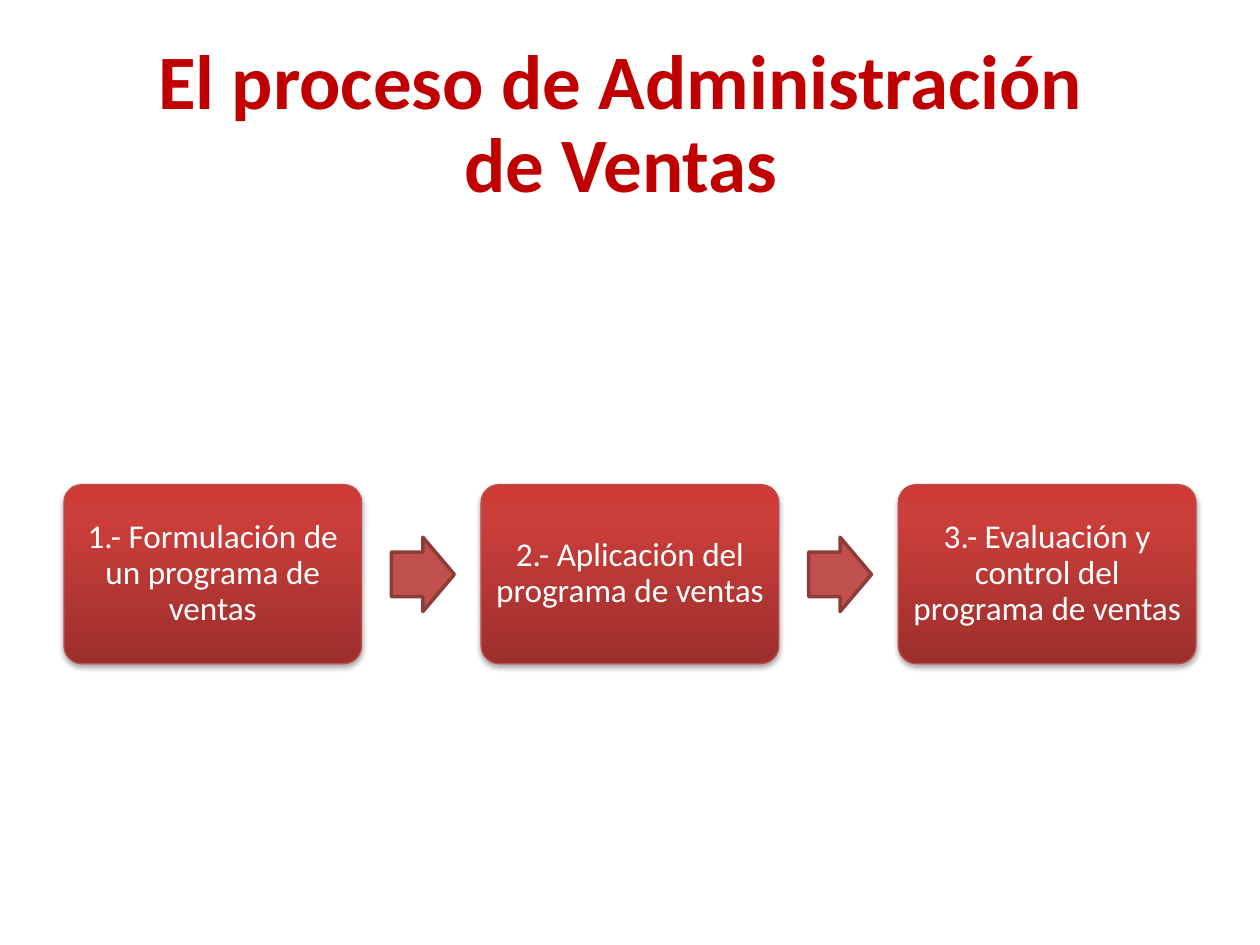
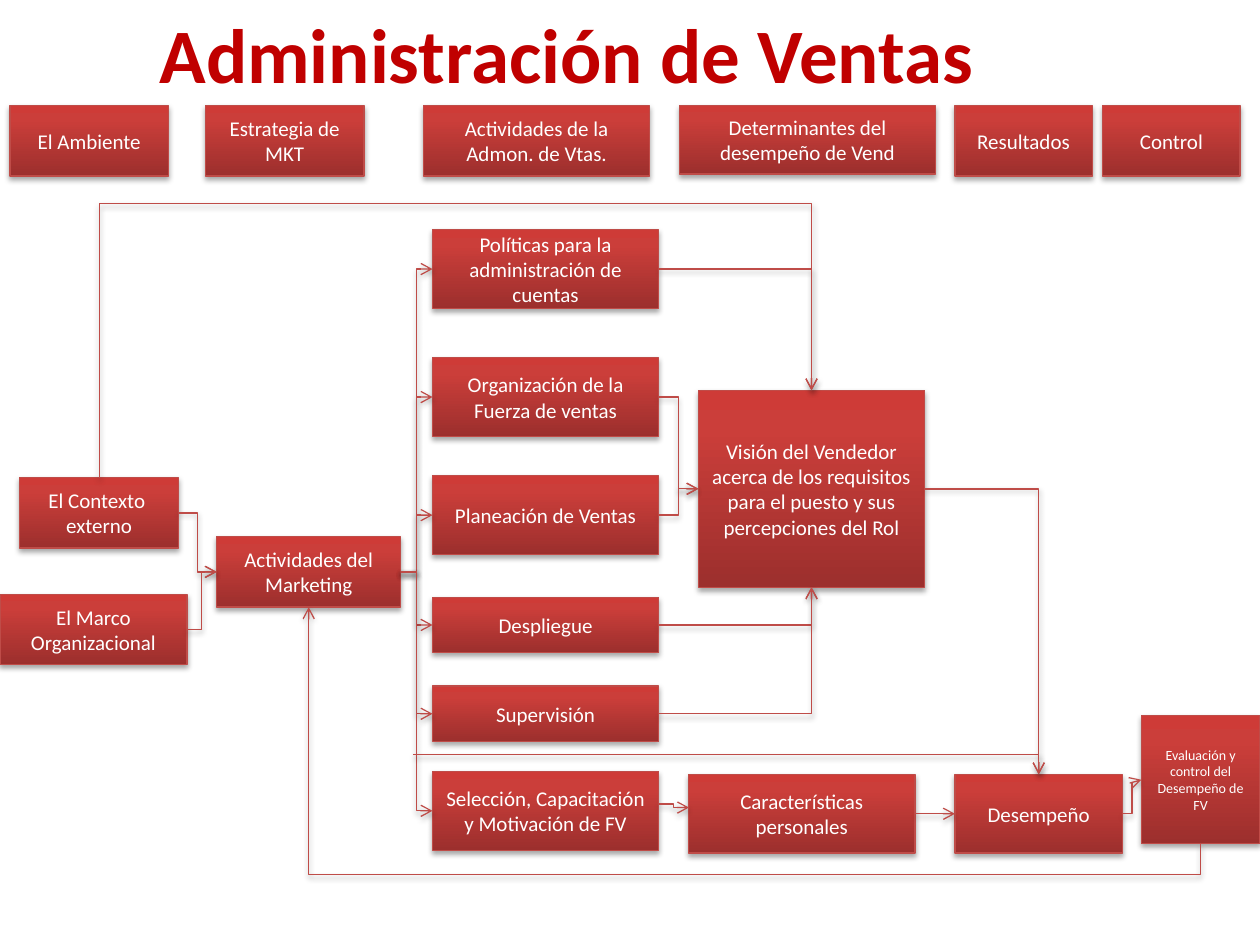
import copy

import lxml.etree
import pptx
import pptx.dml.color
import pptx.enum.shapes
import pptx.enum.text
import pptx.oxml
import pptx.oxml.ns
import pptx.util

Cm, Pt = pptx.util.Cm, pptx.util.Pt
RGBColor = pptx.dml.color.RGBColor
MSO_SHAPE = pptx.enum.shapes.MSO_SHAPE
MSO_CONNECTOR = pptx.enum.shapes.MSO_CONNECTOR
MSO_ANCHOR = pptx.enum.text.MSO_ANCHOR
qn = pptx.oxml.ns.qn

FONT = "Calibri"
WHITE = RGBColor(0xFF, 0xFF, 0xFF)
TITLE_RED = RGBColor(0xC0, 0x00, 0x00)
LINE_RED = RGBColor(0xBF, 0x4C, 0x48)
ARROW_FILL = RGBColor(0xC0, 0x50, 0x4D)
ARROW_LINE = RGBColor(0x8E, 0x3B, 0x39)
GRADIENT = [
    (0, RGBColor(0x9C, 0x2F, 0x2D)),
    (0.8, RGBColor(0xCB, 0x3E, 0x3A)),
    (1, RGBColor(0xCE, 0x3B, 0x37)),
]
SHADOW = pptx.oxml.parse_xml(
    '<a:outerShdw xmlns:a="http://schemas.openxmlformats.org/drawingml/2006/main"'
    ' blurRad="40000" dist="23000" dir="5400000" rotWithShape="0">'
    '<a:srgbClr val="000000"><a:alpha val="35000"/></a:srgbClr></a:outerShdw>'
)
TOP, LEFT, BOTTOM, RIGHT = range(4)


def put_text(sp, text, size=12, color=WHITE, bold=False, anchor=MSO_ANCHOR.MIDDLE,
             spacing=1.0, inset=None):
    """Fill a shape with centred text, one paragraph per line of text."""
    tf = sp.text_frame
    tf.word_wrap = True
    tf.auto_size = pptx.enum.text.MSO_AUTO_SIZE.NONE
    tf.vertical_anchor = anchor
    if inset is not None:
        tf.margin_left = tf.margin_right = tf.margin_top = tf.margin_bottom = inset
    for i, line in enumerate(text.split("\n")):
        p = tf.add_paragraph() if i else tf.paragraphs[0]
        p.alignment = pptx.enum.text.PP_ALIGN.CENTER
        p.line_spacing = spacing
        r = p.add_run()
        r.text = line
        r.font.name, r.font.size, r.font.bold = FONT, Pt(size), bold
        r.font.color.rgb = color


def add_box(s, text, x, y, w, h, shape=MSO_SHAPE.RECTANGLE, **fmt):
    """Add a red gradient box with a soft shadow; lengths in centimetres."""
    sp = s.shapes.add_shape(shape, Cm(x), Cm(y), Cm(w), Cm(h))
    sp.fill.gradient()
    sp.fill.gradient_angle = 90
    gs_list = sp._element.spPr.find(qn("a:gradFill")).find(qn("a:gsLst"))
    gs_list.append(copy.deepcopy(gs_list[0]))
    for stop, (position, color) in zip(sp.fill.gradient_stops, GRADIENT):
        stop.position = position
        stop.color.rgb = color
    sp.line.color.rgb = LINE_RED
    sp.line.width = Pt(0.75)
    sp.shadow.inherit = False
    sp._element.spPr.find(qn("a:effectLst")).append(copy.deepcopy(SHADOW))
    put_text(sp, text, **fmt)
    return sp


prs = pptx.Presentation()
prs.slide_width, prs.slide_height = Cm(25.4), Cm(19.05)

# Titles of both slides
slides = []
for text, x, y, spacing in [
    ("El proceso de Administración\nde Ventas", 1.09, 0.74, 0.9),
    ("Administración de Ventas", 0, 0, 1.0),
]:
    s = prs.slides.add_slide(prs.slide_layouts[5])
    title = s.shapes.title
    title.left, title.top, title.width, title.height = Cm(x), Cm(y), Cm(22.86), Cm(3.89)
    put_text(title, text, size=44, color=TITLE_RED, bold=True,
             anchor=MSO_ANCHOR.TOP, spacing=spacing)
    slides.append(s)
process, model = slides

# Slide 1: three steps joined by block arrows
STEP = 8.41
steps = [
    "1.- Formulación de un programa de ventas",
    "2.- Aplicación del programa de ventas",
    "3.- Evaluación y control del programa de ventas",
]
for i, text in enumerate(steps):
    sp = add_box(process, text, 1.29 + i * STEP, 9.77, 6, 3.61,
                 shape=MSO_SHAPE.ROUNDED_RECTANGLE, size=19, spacing=0.9, inset=Cm(0.1))
    sp.adjustments[0] = 0.1
    if i < len(steps) - 1:
        arrow = process.shapes.add_shape(
            MSO_SHAPE.RIGHT_ARROW, Cm(7.89 + i * STEP), Cm(10.83), Cm(1.27), Cm(1.5))
        arrow.adjustments[0], arrow.adjustments[1] = 0.6, 0.5
        arrow.fill.solid()
        arrow.fill.fore_color.rgb = ARROW_FILL
        arrow.line.color.rgb = ARROW_LINE
        arrow.line.width = Pt(2)
        arrow.shadow.inherit = False

# Slide 2: column headings
model.shapes.title.fill.solid()
model.shapes.title.fill.fore_color.rgb = WHITE
for text, x, w, h in [
    ("El Ambiente", 0.2, 3.2, 1.42),
    ("Estrategia de MKT", 4.14, 3.2, 1.42),
    ("Actividades de la Admon. de Vtas.", 8.54, 4.56, 1.42),
    ("Determinantes del desempeño de Vend", 13.7, 5.16, 1.38),
    ("Resultados", 19.25, 2.77, 1.42),
    ("Control", 22.23, 2.77, 1.42),
]:
    add_box(model, text, x, 2.13, w, h)

# Slide 2: boxes of the model
context = add_box(model, "El Contexto \nexterno", 0.4, 9.63, 3.2, 1.42)
framework = add_box(model, "El Marco Organizacional", 0, 11.98, 3.77, 1.42)
marketing = add_box(model, "Actividades del Marketing", 4.37, 10.82, 3.71, 1.42)
activities = [
    add_box(model, text, 8.72, y, 4.56, h)
    for text, y, h in [
        ("Políticas para la administración de cuentas", 4.63, 1.59),
        ("Organización de la Fuerza de ventas", 7.21, 1.59),
        ("Planeación de Ventas", 9.59, 1.59),
        ("Despliegue", 12.04, 1.12),
        ("Supervisión", 13.83, 1.12),
        ("Selección, Capacitación y Motivación de FV", 15.55, 1.59),
    ]
]
policies, organization, planning, deployment, supervision, selection = activities
vision = add_box(
    model,
    "Visión del Vendedor acerca de los requisitos para el puesto y sus percepciones del Rol",
    14.08, 7.87, 4.56, 3.97)
traits = add_box(model, "Características personales", 13.88, 15.61, 4.57, 1.59)
performance = add_box(model, "Desempeño", 19.25, 15.61, 3.38, 1.59)
evaluation = add_box(model, "Evaluación y control del Desempeño de FV",
                     23.01, 14.43, 2.39, 2.58, size=8)

# Slide 2: arrows as (start, end, preset, bend); an end is (box, side) or a point in cm
Z_BEND, CORNER, STRAIGHT = "bentConnector3", "bentConnector2", "line"
links = [
    ((context, TOP), (vision, TOP), Z_BEND, 3.14),
    ((context, RIGHT), (marketing, LEFT), Z_BEND, None),
    ((framework, RIGHT), (marketing, LEFT), Z_BEND, None),
    *[((marketing, RIGHT), (sp, LEFT), Z_BEND, None) for sp in activities],
    ((13.28, 16.21), (13.89, 16.28), Z_BEND, None),
    ((traits, RIGHT), (performance, LEFT), STRAIGHT, None),
    ((performance, RIGHT), (evaluation, LEFT), Z_BEND, None),
    ((8.33, 15.21), (performance, TOP), CORNER, None),
    *[((sp, RIGHT), (vision, LEFT), Z_BEND, None) for sp in (organization, planning)],
    *[((sp, RIGHT), (vision, BOTTOM), CORNER, None) for sp in (deployment, supervision)],
    ((policies, RIGHT), (vision, TOP), CORNER, None),
    ((evaluation, BOTTOM), (marketing, BOTTOM), Z_BEND, -0.13),
    ((vision, RIGHT), (performance, TOP), CORNER, None),
]
for start, end, preset, bend in links:
    kind = MSO_CONNECTOR.STRAIGHT if preset == STRAIGHT else MSO_CONNECTOR.ELBOW
    c = model.shapes.add_connector(kind, 0, 0, 0, 0)
    if isinstance(start[0], float):
        c.begin_x, c.begin_y = Cm(start[0]), Cm(start[1])
    else:
        c.begin_connect(*start)
    if isinstance(end[0], float):
        c.end_x, c.end_y = Cm(end[0]), Cm(end[1])
    else:
        c.end_connect(*end)
    c.line.color.rgb = LINE_RED
    c.line.width = Pt(0.75)
    spPr = c._element.spPr
    lxml.etree.SubElement(spPr.find(qn("a:ln")), qn("a:tailEnd"), type="arrow")
    lxml.etree.SubElement(spPr, qn("a:effectLst")).append(copy.deepcopy(SHADOW))
    geometry = spPr.find(qn("a:prstGeom"))
    geometry.set("prst", preset)
    if bend is not None:
        # Leaves its box vertically: a quarter turn swaps width and height
        dx, dy = c.end_x - c.begin_x, c.end_y - c.begin_y
        mid_x, mid_y = (c.begin_x + c.end_x) // 2, (c.begin_y + c.end_y) // 2
        c.width, c.height = abs(dy), abs(dx)
        c.left, c.top = mid_x - abs(dy) // 2, mid_y - abs(dx) // 2
        xfrm = spPr.find(qn("a:xfrm"))
        xfrm.set("rot", "5400000")
        xfrm.set("flipH", str(int(dy < 0)))
        xfrm.set("flipV", str(int(dx > 0)))
        lxml.etree.SubElement(geometry.find(qn("a:avLst")), qn("a:gd"),
                              name="adj1", fmla=f"val {round(bend * 100000)}")

prs.save("out.pptx")
